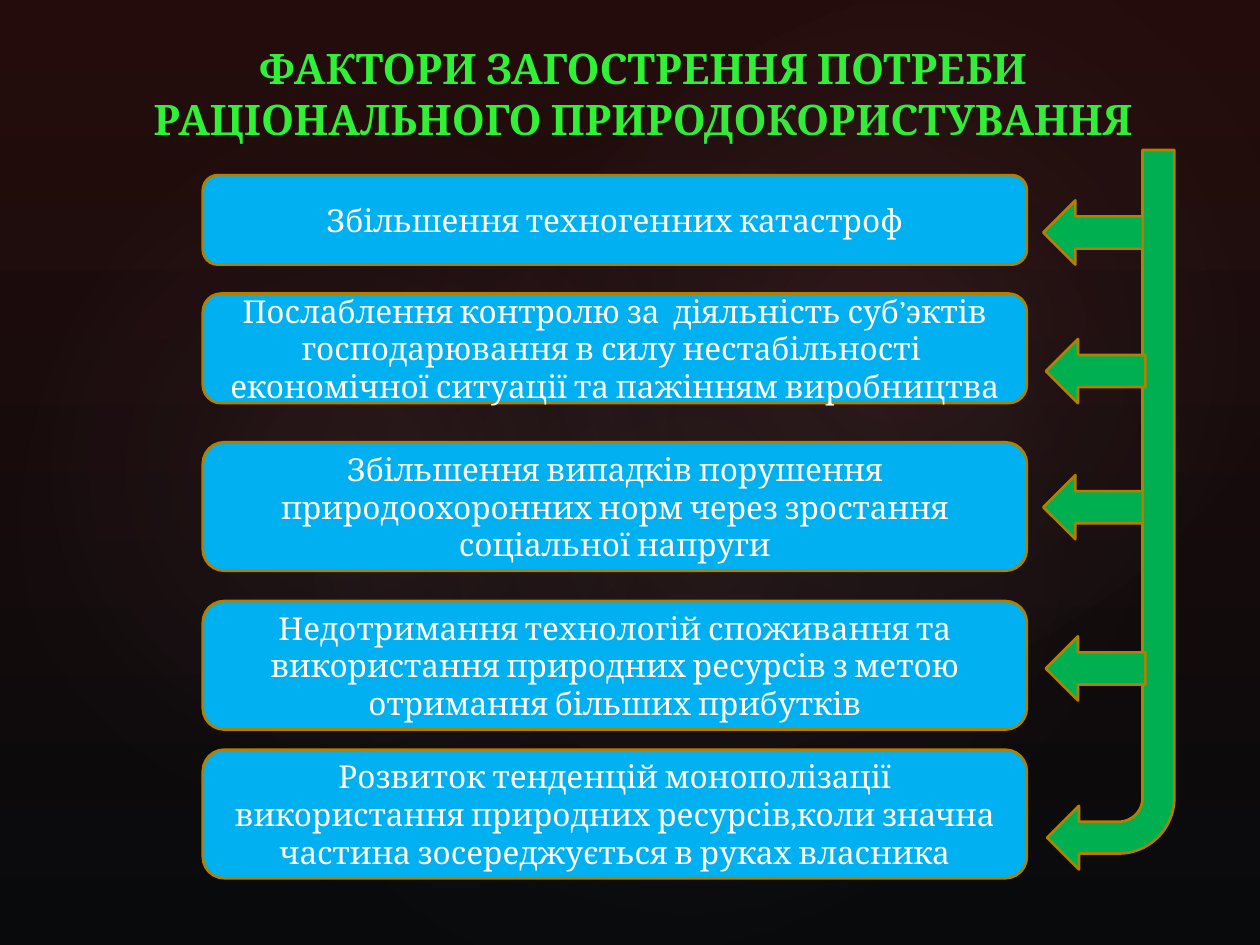
from lxml import etree
from pptx import Presentation, util as u
from pptx.dml.color import RGBColor
from pptx.enum import shapes, text
from pptx.oxml import ns, parse_xml

WIDTH, HEIGHT = 10, 7.5
FONT = "Cambria"
TOP_COLOR = RGBColor(0x25, 0x0C, 0x0C)
BOTTOM_COLOR = RGBColor(0x09, 0x0A, 0x0C)
GLOW_COLOR = RGBColor(0xDD, 0x91, 0x91)
GLOW_EDGE = RGBColor(0x5A, 0x63, 0x78)
TITLE_COLOR = RGBColor(0x30, 0xF2, 0x35)
BOX_COLOR = RGBColor(0x00, 0xB0, 0xF0)
ARROW_COLOR = RGBColor(0x00, 0xB0, 0x50)
LINE_COLOR = RGBColor(0xB2, 0x80, 0x00)
WHITE = RGBColor(0xFF, 0xFF, 0xFF)

TITLE = "ФАКТОРИ ЗАГОСТРЕННЯ ПОТРЕБИ РАЦІОНАЛЬНОГО ПРИРОДОКОРИСТУВАННЯ"
BOX_LEFT, BOX_WIDTH = 1.61, 6.54
ARROW_SIZE = (0.79, 0.51)
FACTORS = [
    (1.39, 0.71, "Збільшення техногенних катастроф"),
    (2.33, 0.87, "Послаблення контролю за  діяльність суб’эктів господарювання "
     "в силу нестабільності  економічної ситуації та пажінням виробництва"),
    (3.51, 1.02, "Збільшення випадків порушення природоохоронних норм "
     "через зростання соціальної напруги"),
    (4.77, 1.02, "Недотримання технологій споживання та використання "
     "природних ресурсів з метою отримання більших прибутків"),
    (5.95, 1.02, "Розвиток тенденцій монополізації використання природних "
     "ресурсів,коли значна частина зосереджується в руках власника"),
]
ARROWS = [(8.28, 1.59), (8.3, 2.69), (8.28, 3.77), (8.3, 5.05)]
GLOWS = [
    ((1.5, 1.14, 7.92, 6.24), 328.7, 7),
    ((-0.3, 1.28, 6.06, 4.9), 294.3, 8),
    ((3.58, 0.13, 7.09, 5.2), 328.7, 8),
]


def paint_background(slide):
    """Fill the slide with a vertical dark gradient."""
    fill = slide.background.fill
    fill.gradient()
    fill.gradient_angle = 270
    for stop, color in zip(fill.gradient_stops, (TOP_COLOR, BOTTOM_COLOR)):
        stop.color.rgb = color


def add_plain_shape(slide, kind, box, rotation=0):
    """Add a preset shape without shadow at a box given in inches."""
    shape = slide.shapes.add_shape(kind, *map(u.Inches, box))
    shape.shadow.inherit = False
    shape.rotation = rotation
    return shape


def add_glow(slide, box, rotation, opacity):
    """Add a soft ellipse that fades out from its centre."""
    shape = add_plain_shape(slide, shapes.MSO_SHAPE.OVAL, box, rotation)
    shape.line.fill.background()
    stops = "".join(
        f'<a:gs pos="{place * 1000}"><a:srgbClr val="{color}">'
        f'<a:alpha val="{alpha * 1000}"/></a:srgbClr></a:gs>'
        for place, color, alpha in ((0, GLOW_COLOR, opacity), (58, GLOW_EDGE, 0), (100, GLOW_EDGE, 0)))
    gradient = parse_xml(
        f'<a:gradFill {ns.nsdecls("a")}><a:gsLst>{stops}</a:gsLst><a:path path="circle">'
        '<a:fillToRect l="50000" t="50000" r="50000" b="50000"/></a:path></a:gradFill>')
    shape._element.spPr.find(ns.qn("a:prstGeom")).addnext(gradient)


def add_outlined(slide, kind, box, color, rotation=0):
    """Add a solid shape with the common gold outline."""
    shape = add_plain_shape(slide, kind, box, rotation)
    shape.fill.solid()
    shape.fill.fore_color.rgb = color
    shape.line.color.rgb = LINE_COLOR
    shape.line.width = u.Pt(1.5)
    return shape


def write_centred(shape, words, size, color, bold=False):
    """Write one centred paragraph into a shape."""
    frame = shape.text_frame
    frame.text = words
    frame.word_wrap = True
    paragraph = frame.paragraphs[0]
    paragraph.alignment = text.PP_ALIGN.CENTER
    font = paragraph.runs[0].font
    font.name, font.size, font.bold = FONT, u.Pt(size), bold
    font.color.rgb = color


def set_title(slide):
    """Place and format the title placeholder."""
    title = slide.shapes.title
    title.left, title.top, title.width, title.height = map(u.Inches, (0.89, 0.29, 8.43, 0.91))
    write_centred(title, TITLE, 24, TITLE_COLOR, True)
    title.text_frame.auto_size = text.MSO_AUTO_SIZE.NONE
    title.text_frame.vertical_anchor = text.MSO_ANCHOR.TOP


def add_factor(slide, top, height, words):
    """Add one rounded box with a factor."""
    box = (BOX_LEFT, top, BOX_WIDTH, height)
    shape = add_outlined(slide, shapes.MSO_SHAPE.ROUNDED_RECTANGLE, box, BOX_COLOR)
    write_centred(shape, words, 18, WHITE)
    shape.text_frame.vertical_anchor = text.MSO_ANCHOR.MIDDLE


def main():
    """Build the slide and save it."""
    presentation = Presentation()
    presentation.slide_width, presentation.slide_height = u.Inches(WIDTH), u.Inches(HEIGHT)
    slide = presentation.slides.add_slide(presentation.slide_layouts.get_by_name("Title Only"))
    paint_background(slide)
    for glow in GLOWS:
        add_glow(slide, *glow)
    set_title(slide)
    for factor in FACTORS:
        add_factor(slide, *factor)
    add_outlined(slide, shapes.MSO_SHAPE.BENT_ARROW, (8.31, 1.19, 1.01, 5.71), ARROW_COLOR, 180)
    for corner in ARROWS:
        add_outlined(slide, shapes.MSO_SHAPE.RIGHT_ARROW, corner + ARROW_SIZE, ARROW_COLOR, 180)
    presentation.save("out.pptx")


if __name__ == "__main__":
    main()
